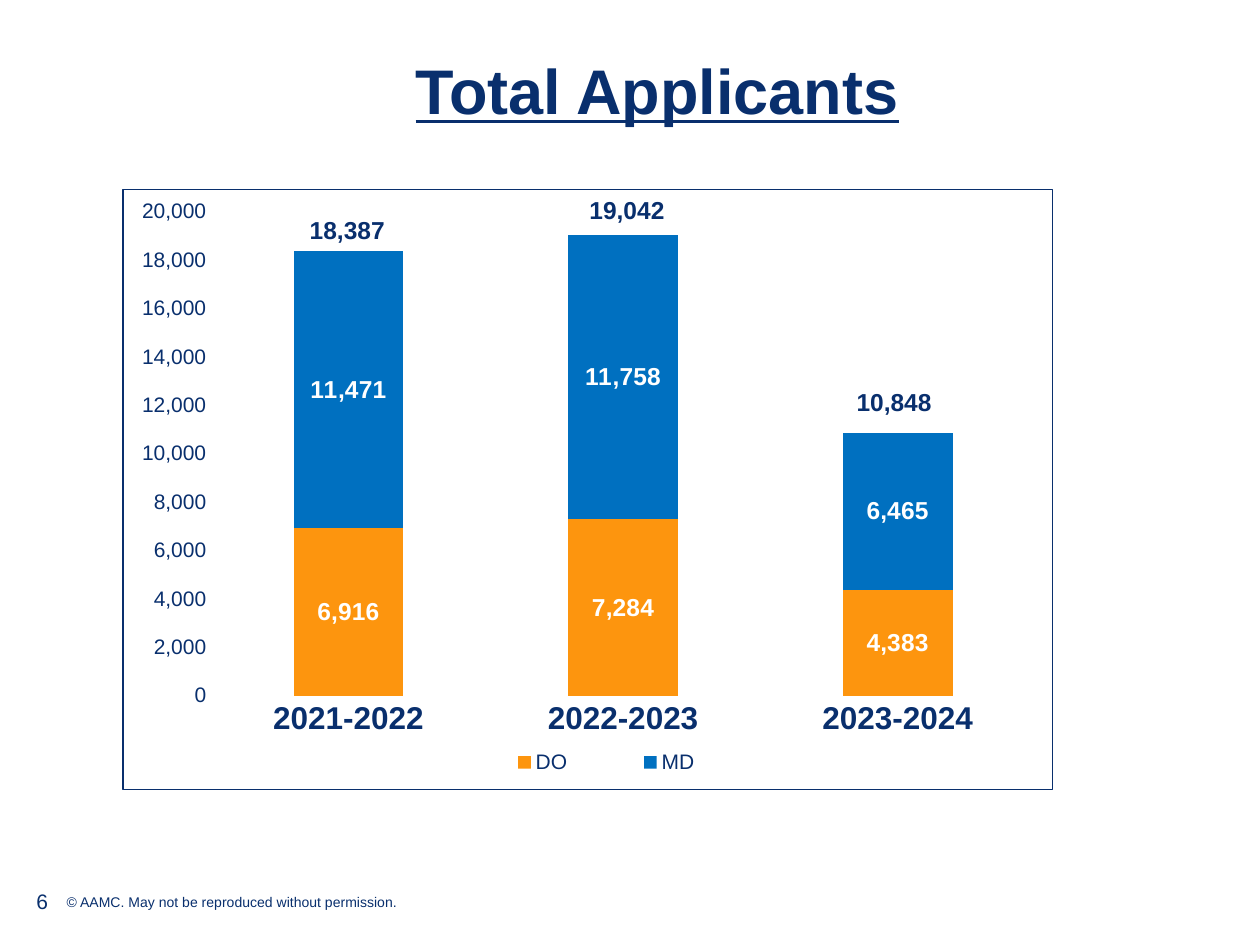
from pptx import Presentation
from pptx.chart.data import CategoryChartData as ChartData
from pptx.dml.color import RGBColor as RGB
from pptx.enum.chart import (XL_CHART_TYPE as CHART, XL_LABEL_POSITION as LABEL,
                             XL_LEGEND_POSITION as LEGEND, XL_TICK_MARK as TICK)
from pptx.enum.text import MSO_ANCHOR as ANCHOR, PP_ALIGN as ALIGN
from pptx.oxml import parse_xml
from pptx.oxml.ns import nsdecls
from pptx.util import Inches, Pt

COLORS = {"navy": "092F6D", "orange": "FD950E", "blue": "0070C0", "white": "FFFFFF"}
FONT = "Arial"

prs = Presentation()
prs.slide_width, prs.slide_height = Inches(10), Inches(7.5)
W, H = prs.slide_width, prs.slide_height
s = prs.slides.add_slide(prs.slide_layouts[5])


def style(font, size, color="navy", bold=False):
    font.name, font.size, font.bold = FONT, Pt(size), bold
    font.color.rgb = RGB.from_string(COLORS[color])


def write(text, x, y, w, h, size, sp=None, bold=False, underline=None,
          align=ALIGN.LEFT, anchor=ANCHOR.TOP, inset=None, spacing=None):
    """Put text in a box placed by shares of the slide's width and height."""
    box = [int(x * W), int(y * H), int(w * W), int(h * H)]
    sp = sp or s.shapes.add_textbox(*box)
    sp.left, sp.top, sp.width, sp.height = box
    tf = sp.text_frame
    tf.word_wrap, tf.vertical_anchor = True, anchor
    if inset is not None:
        tf.margin_left = tf.margin_right = tf.margin_top = tf.margin_bottom = inset
    p = tf.paragraphs[0]
    p.alignment, p.line_spacing = align, spacing
    r = p.add_run()
    r.text = text
    style(r.font, size, bold=bold)
    r.font.underline = underline


# Title and footer
write("Total Applicants", 0.063, 0.044, 0.917, 0.091, 36, sp=s.shapes.title, bold=True,
      underline=True, align=ALIGN.CENTER, anchor=ANCHOR.BOTTOM, inset=0, spacing=0.85)
write("© AAMC. May not be reproduced without permission.", 0.043, 0.939, 0.822, 0.031, 8)
write("6", 0.019, 0.927, 0.225, 0.053, 12, anchor=ANCHOR.MIDDLE)

# Stacked column chart
data = ChartData(number_format="#,##0")
data.categories = ["2021-2022", "2022-2023", "2023-2024"]
data.add_series("DO", [6916, 7284, 4383])
data.add_series("MD", [11471, 11758, 6465])
chart = s.shapes.add_chart(CHART.COLUMN_STACKED, int(0.097 * W), int(0.2 * H),
                           int(0.739 * W), int(0.636 * H), data).chart
chart.has_title = False
style(chart.font, 10, "white")

plot = chart.plots[0]
plot.gap_width, plot.overlap, plot.vary_by_categories = 150, 100, False
for series, color in zip(plot.series, ["orange", "blue"]):
    series.format.fill.solid()
    series.format.fill.fore_color.rgb = RGB.from_string(COLORS[color])
    labels = series.data_labels
    labels.show_value, labels.position = True, LABEL.CENTER
    labels.number_format, labels.number_format_is_linked = "#,##0", False
    style(labels.font, 14, "white", bold=True)

# Axes and legend
cat, val = chart.category_axis, chart.value_axis
for axis in (cat, val):
    axis.major_tick_mark = axis.minor_tick_mark = TICK.NONE
style(cat.tick_labels.font, 18, bold=True)
style(val.tick_labels.font, 12)
val.minimum_scale, val.maximum_scale, val.major_unit = 0, 20000, 2000
val.tick_labels.number_format, val.tick_labels.number_format_is_linked = "#,##0", False
val.format.line.fill.background()
val.has_major_gridlines = True
for line in (cat.format.line, val.major_gridlines.format.line):
    line.color.rgb, line.width = RGB.from_string(COLORS["white"]), Pt(0.75)
chart.has_legend = True
chart.legend.position, chart.legend.include_in_layout = LEGEND.BOTTOM, False
style(chart.legend.font, 12)

# Fixed plot and legend areas, as shares of the chart
root = chart.element
for tag, index, target, (x, y, w, h) in [
        ("plotArea", 0, '<c:layoutTarget val="inner"/>', (0.095, 0.037, 0.886, 0.807)),
        ("legend", 1, "", (0.35, 0.93, 0.34, 0.05))]:
    area = root.xpath(f"c:chart/c:{tag}")[0]
    for old in area.xpath("c:layout"):
        area.remove(old)
    area.insert(index, parse_xml(
        f'<c:layout {nsdecls("c")}><c:manualLayout>{target}'
        f'<c:xMode val="edge"/><c:yMode val="edge"/><c:x val="{x}"/><c:y val="{y}"/>'
        f'<c:w val="{w}"/><c:h val="{h}"/></c:manualLayout></c:layout>'))

# Chart border
root.xpath("c:chart")[0].addnext(parse_xml(
    f'<c:spPr {nsdecls("c", "a")}><a:noFill/><a:ln w="{Pt(0.75)}"><a:solidFill>'
    f'<a:srgbClr val="{COLORS["navy"]}"/></a:solidFill></a:ln></c:spPr>'))

# Totals above the columns
for total, x, y in [("18,387", 0.236, 0.221), ("19,042", 0.458, 0.2), ("10,848", 0.67, 0.403)]:
    write(total, x, y, 0.084, 0.045, 14, bold=True)

prs.save("out.pptx")
